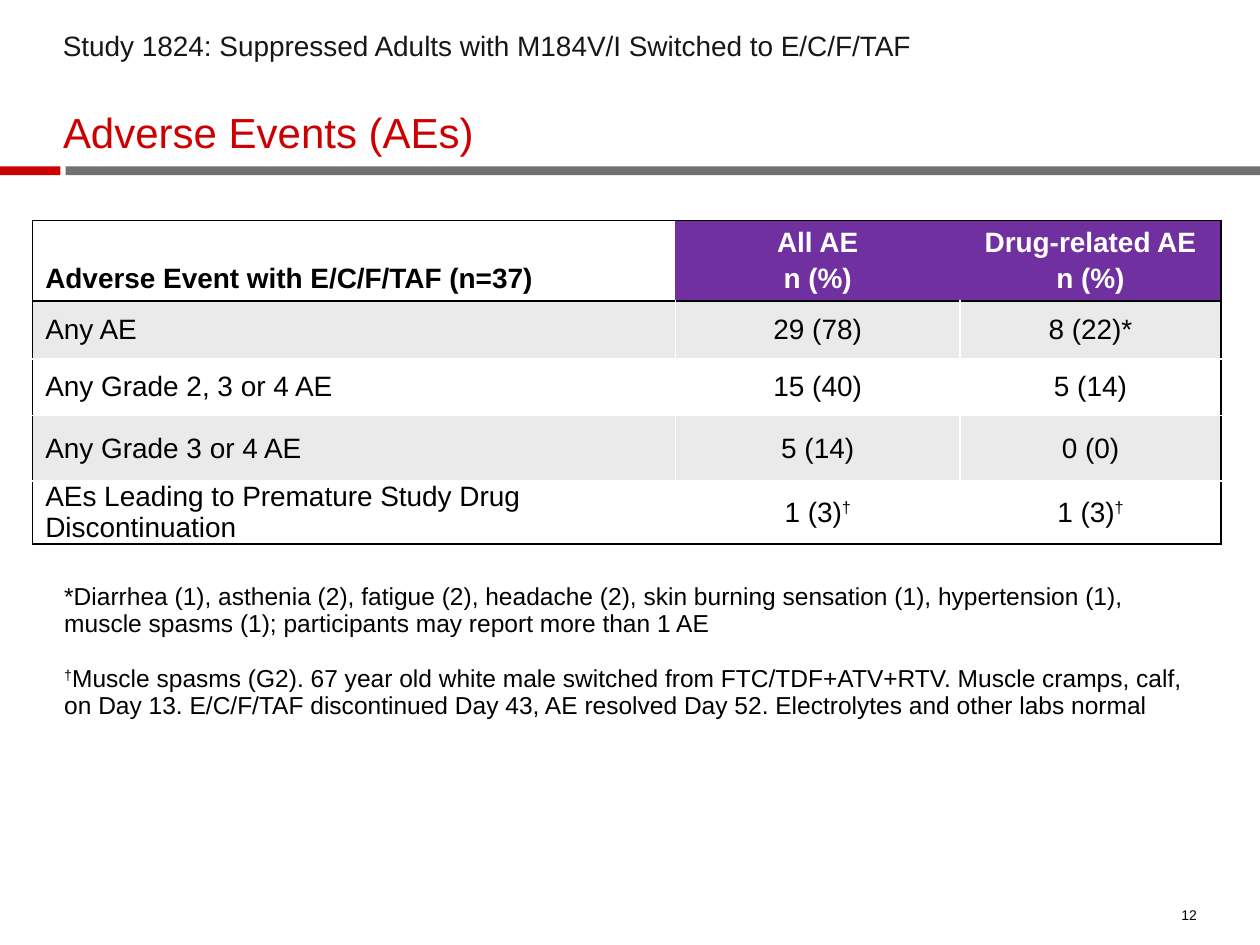
"""Build the adverse events slide of Study 1824."""
from lxml.etree import SubElement
from pptx import Presentation
from pptx.dml.color import RGBColor
from pptx.enum.shapes import MSO_SHAPE
from pptx.enum.text import MSO_ANCHOR, MSO_AUTO_SIZE, PP_ALIGN
from pptx.oxml.ns import qn
from pptx.util import Inches, Pt

C = {"red": "CC0000", "gray": "717171", "purple": "7030A0", "band": "EAEAEA",
     "white": "FFFFFF", "black": "000000", "ink": "171717"}

prs = Presentation()
prs.slide_width, prs.slide_height = Inches(10), Inches(7.5)
s = prs.slides.add_slide(prs.slide_layouts[5])


def box(x, y, w, h):
    """Turn percentages of the slide's size into lengths."""
    W, H = prs.slide_width, prs.slide_height
    return [int(v * d / 100) for v, d in ((x, W), (y, H), (w, W), (h, H))]


def write(p, text, size, color, bold=False, align=PP_ALIGN.LEFT, spacing=None):
    """Fill a paragraph, raising each dagger."""
    head, dagger, tail = text.partition("†")
    for part in filter(None, (head, dagger, tail)):
        r = p.add_run()
        r.text = part
        if part == "†":
            r.font._element.set("baseline", "30000")
    p.font.name, p.font.size, p.font.bold = "Arial", Pt(size), bold
    p.font.color.rgb = RGBColor.from_string(C[color])
    p.alignment, p.line_spacing = align, spacing


for x, w, color in ((5.2, 94.8, "gray"), (0, 4.8, "red")):
    bar = s.shapes.add_shape(MSO_SHAPE.RECTANGLE, *box(x, 17.6, w, 0.93))
    bar.shadow.inherit = False
    bar.fill.solid()
    bar.fill.fore_color.rgb = RGBColor.from_string(C[color])
    bar.line.fill.background()

title = s.shapes.title
title.left, title.top, title.width, title.height = box(5, 6.8, 90, 9.87)
study = s.shapes.add_textbox(*box(4, 2.8, 90, 4.4))
notes = s.shapes.add_textbox(*box(5.1, 61.87, 89.3, 20.13))
number = s.shapes.add_textbox(*box(92.3, 95.33, 2.7, 2.4))
for sp in (title, study, notes, number):
    tf = sp.text_frame
    tf.word_wrap, tf.auto_size = True, MSO_AUTO_SIZE.NONE
    if sp is not study:
        tf.margin_left = tf.margin_right = tf.margin_top = tf.margin_bottom = 0
for sp in (title, number):
    sp.text_frame.vertical_anchor = MSO_ANCHOR.BOTTOM

write(title.text_frame.paragraphs[0], "Adverse Events (AEs)", 24, "red", spacing=0.9)
write(study.text_frame.paragraphs[0],
      "Study 1824: Suppressed Adults with M184V/I Switched to E/C/F/TAF",
      16, "ink", spacing=0.9)
write(number.text_frame.paragraphs[0], "12", 8, "black", align=PP_ALIGN.RIGHT)
tf = notes.text_frame
write(tf.paragraphs[0],
      "*Diarrhea (1), asthenia (2), fatigue (2), headache (2), skin burning sensation (1), "
      "hypertension (1), muscle spasms (1); participants may report more than 1 AE",
      14, "black", spacing=0.9)
p = tf.add_paragraph()
write(p, "†Muscle spasms (G2). 67 year old white male switched from FTC/TDF+ATV+RTV. "
      "Muscle cramps, calf, on Day 13. E/C/F/TAF discontinued Day 43, AE resolved Day 52. "
      "Electrolytes and other labs normal", 14, "black", spacing=0.9)
p.space_before = Pt(16.5)

rows = [
    ("Adverse Event with E/C/F/TAF (n=37)", "All AE\nn (%)", "Drug-related AE\nn (%)"),
    ("Any AE", "29 (78)", "8 (22)*"),
    ("Any Grade 2, 3 or 4 AE", "15 (40)", "5 (14)"),
    ("Any Grade 3 or 4 AE", "5 (14)", "0 (0)"),
    ("AEs Leading to Premature Study Drug Discontinuation", "1 (3)†", "1 (3)†"),
]
widths, heights = (51, 22.6, 20.7), (8.53, 6.13, 6, 6.93, 6.67)
tbl = s.shapes.add_table(len(rows), len(widths),
                         *box(2.6, 23.33, sum(widths), sum(heights))).table
tbl.horz_banding = False
for col, w in zip(tbl.columns, widths):
    col.width = box(0, 0, w, 0)[2]
for row, h in zip(tbl.rows, heights):
    row.height = box(0, 0, 0, h)[3]

for i, row in enumerate(rows):
    for j, text in enumerate(row):
        cell, header = tbl.cell(i, j), i == 0
        inner = None if header else "white"
        edges = {"L": "black" if j == 0 else inner,
                 "R": "black" if j == len(row) - 1 else inner,
                 "T": "black" if i < 2 else "white",
                 "B": "black" if i in (0, len(rows) - 1) else "white"}
        for side, color in edges.items():
            ln = SubElement(cell._tc.get_or_add_tcPr(), qn(f"a:ln{side}"), w=str(Pt(1)))
            if color:
                SubElement(SubElement(ln, qn("a:solidFill")), qn("a:srgbClr"), val=C[color])
            else:
                SubElement(ln, qn("a:noFill"))
        fill = "purple" if header and j else "band" if i % 2 else "white"
        cell.fill.solid()
        cell.fill.fore_color.rgb = RGBColor.from_string(C[fill])
        cell.vertical_anchor = MSO_ANCHOR.BOTTOM if header else MSO_ANCHOR.MIDDLE
        cell.margin_left = cell.margin_right = Inches(0.1 if header or j == 0 else 0)
        cell.margin_top = cell.margin_bottom = Inches(0.05 if header else 0)
        tf = cell.text_frame
        for k, line in enumerate(text.split("\n")):
            p = tf.add_paragraph() if k else tf.paragraphs[0]
            write(p, line, 16, "white" if header and j else "black", header,
                  PP_ALIGN.CENTER if j else PP_ALIGN.LEFT)
            p.space_before = Pt(3.2 if k else 0)

prs.save("out.pptx")
